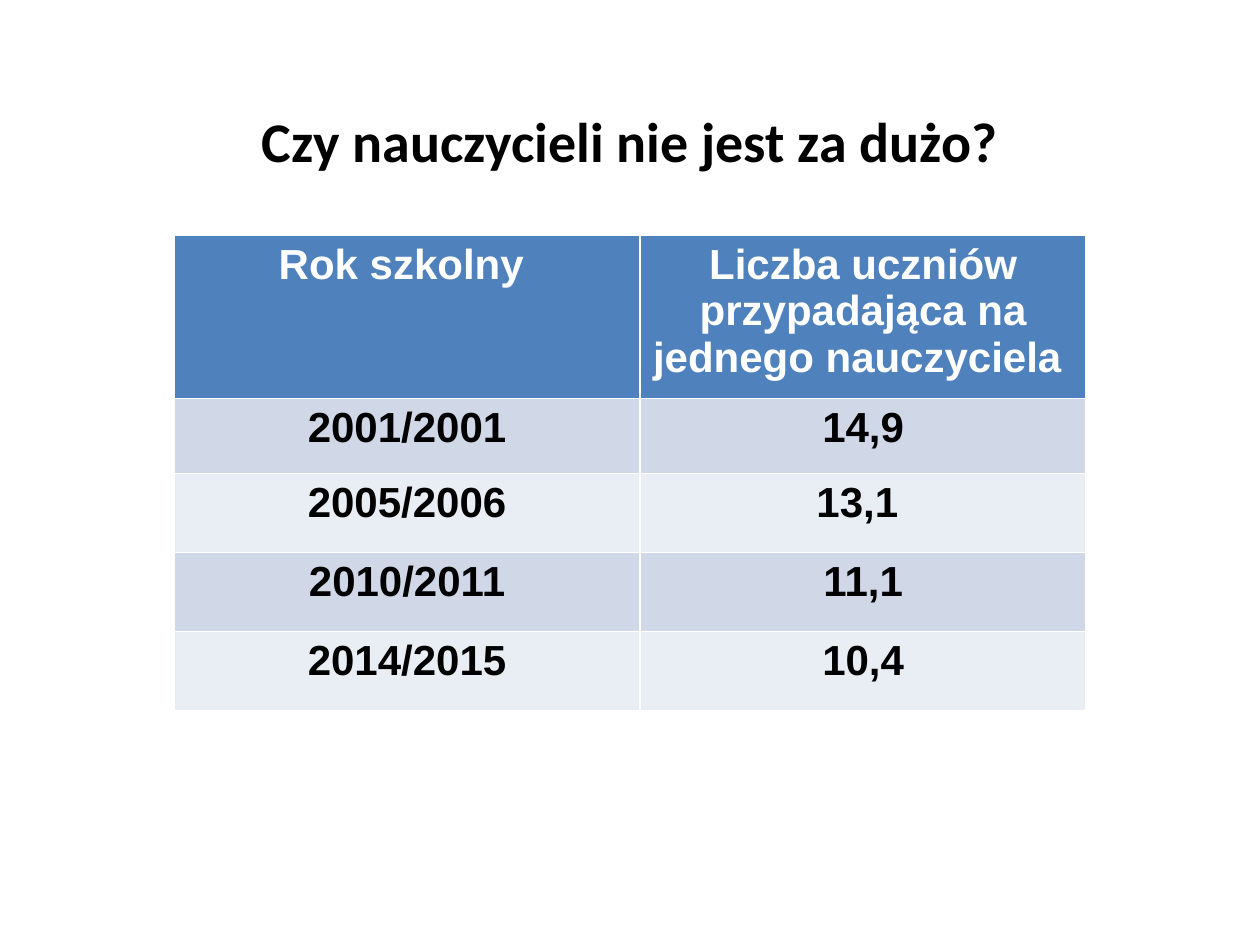
"""Build the slide on the number of pupils per teacher."""
from pptx import Presentation
from pptx.dml.color import RGBColor
from pptx.enum import text
from pptx.util import Pt

BLACK = RGBColor(0, 0, 0)
WHITE = RGBColor(255, 255, 255)
BLUE = RGBColor(0x4F, 0x81, 0xBD)
BANDS = [RGBColor(0xE9, 0xED, 0xF4), RGBColor(0xD0, 0xD8, 0xE8)]

ROWS = [
    ("Rok szkolny ", "Liczba uczniów przypadająca na jednego nauczyciela "),
    ("2001/2001", "14,9"),
    ("2005/2006", "13,1 "),
    ("2010/2011", "11,1"),
    ("2014/2015", "10,4"),
]
WIDTHS = [266.4, 254.9]
HEIGHTS = [86.8, 42.8, 45.2, 45.2, 45.2]


def write(frame, words, face, size, color):
    frame.text = words
    para = frame.paragraphs[0]
    para.alignment = text.PP_ALIGN.CENTER
    font = para.runs[0].font
    font.name, font.size, font.bold = face, Pt(size), True
    font.color.rgb = color


deck = Presentation()
deck.slide_width, deck.slide_height = Pt(720), Pt(540)
slide = deck.slides.add_slide(deck.slide_layouts[6])

title = slide.shapes.add_textbox(Pt(36.7), Pt(31.7), Pt(646.6), Pt(96.5)).text_frame
title.word_wrap = True
title.vertical_anchor = text.MSO_ANCHOR.MIDDLE
write(title, "Czy nauczycieli nie jest za dużo?", "Calibri", 32, BLACK)

table = slide.shapes.add_table(
    len(ROWS), len(WIDTHS), Pt(99.4), Pt(134.2), Pt(sum(WIDTHS)), Pt(sum(HEIGHTS))
).table
for column, width in zip(table.columns, WIDTHS):
    column.width = Pt(width)
for r, (row, height) in enumerate(zip(ROWS, HEIGHTS)):
    table.rows[r].height = Pt(height)
    for c, words in enumerate(row):
        cell = table.cell(r, c)
        cell.fill.solid()
        cell.fill.fore_color.rgb = BANDS[r % 2] if r else BLUE
        write(cell.text_frame, words, "Arial", 24, BLACK if r else WHITE)

deck.save("out.pptx")
